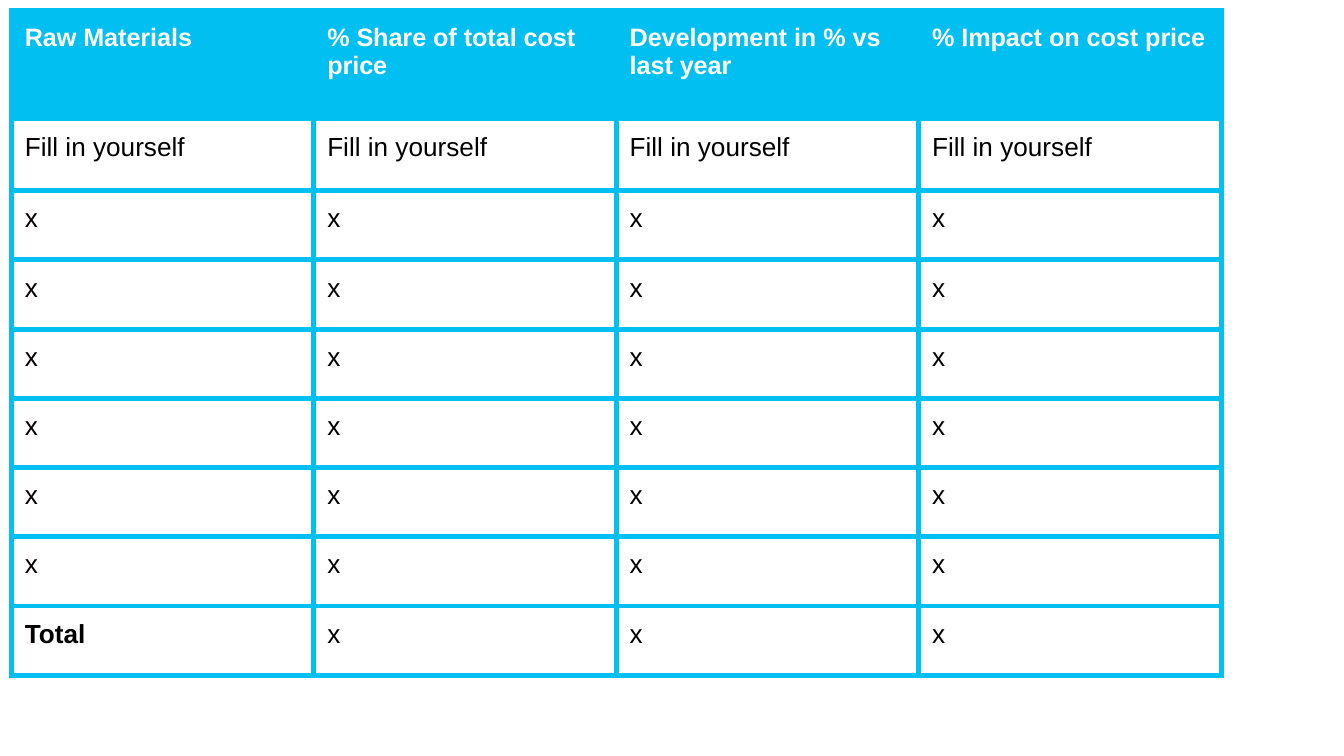
from lxml import etree
from pptx import Presentation
from pptx.dml.color import RGBColor
from pptx.oxml.ns import qn
from pptx.util import Pt

PX = 914400 // 200
BLUE, WHITE, BLACK = "01BFF0", "FFFFFF", "000000"


def color(value):
    return RGBColor.from_string(value)


def set_borders(cell):
    tcPr = cell._tc.get_or_add_tcPr()
    for i, side in enumerate(("lnL", "lnR", "lnT", "lnB")):
        ln = etree.Element(qn(f"a:{side}"), w=str(Pt(3)))
        fill = etree.SubElement(ln, qn("a:solidFill"))
        etree.SubElement(fill, qn("a:srgbClr"), val=BLUE)
        tcPr.insert(i, ln)


header = [
    "Raw Materials",
    "% Share of total cost price",
    "Development in % vs last year",
    "% Impact on cost price",
]
rows = [header, ["Fill in yourself"] * 4]
rows += [["x"] * 4 for _ in range(6)]
rows.append(["Total"] + ["x"] * 3)
heights = [161, 107] + [103] * 7
col_width = 450

prs = Presentation()
prs.slide_width, prs.slide_height = 2000 * PX, 1125 * PX
s = prs.slides.add_slide(prs.slide_layouts[6])

table = s.shapes.add_table(
    len(rows), len(header), 17 * PX, 16 * PX,
    len(header) * col_width * PX, sum(heights) * PX,
).table
table.first_row = False
table.horz_banding = False
for col in table.columns:
    col.width = col_width * PX

for i, (texts, height) in enumerate(zip(rows, heights)):
    table.rows[i].height = height * PX
    for j, text in enumerate(texts):
        cell = table.cell(i, j)
        for side in ("left", "right", "top", "bottom"):
            setattr(cell, f"margin_{side}", 20 * PX)
        if i == 0:
            cell.fill.solid()
            cell.fill.fore_color.rgb = color(BLUE)
        else:
            cell.fill.background()
        set_borders(cell)
        r = cell.text_frame.paragraphs[0].add_run()
        r.text = text
        font = {
            "name": "Arial",
            "size": Pt(13.5 if i == 0 else 14),
            "bold": i == 0 or text == "Total",
        }
        for key, value in font.items():
            setattr(r.font, key, value)
        r.font.color.rgb = color(WHITE if i == 0 else BLACK)

prs.save("out.pptx")
